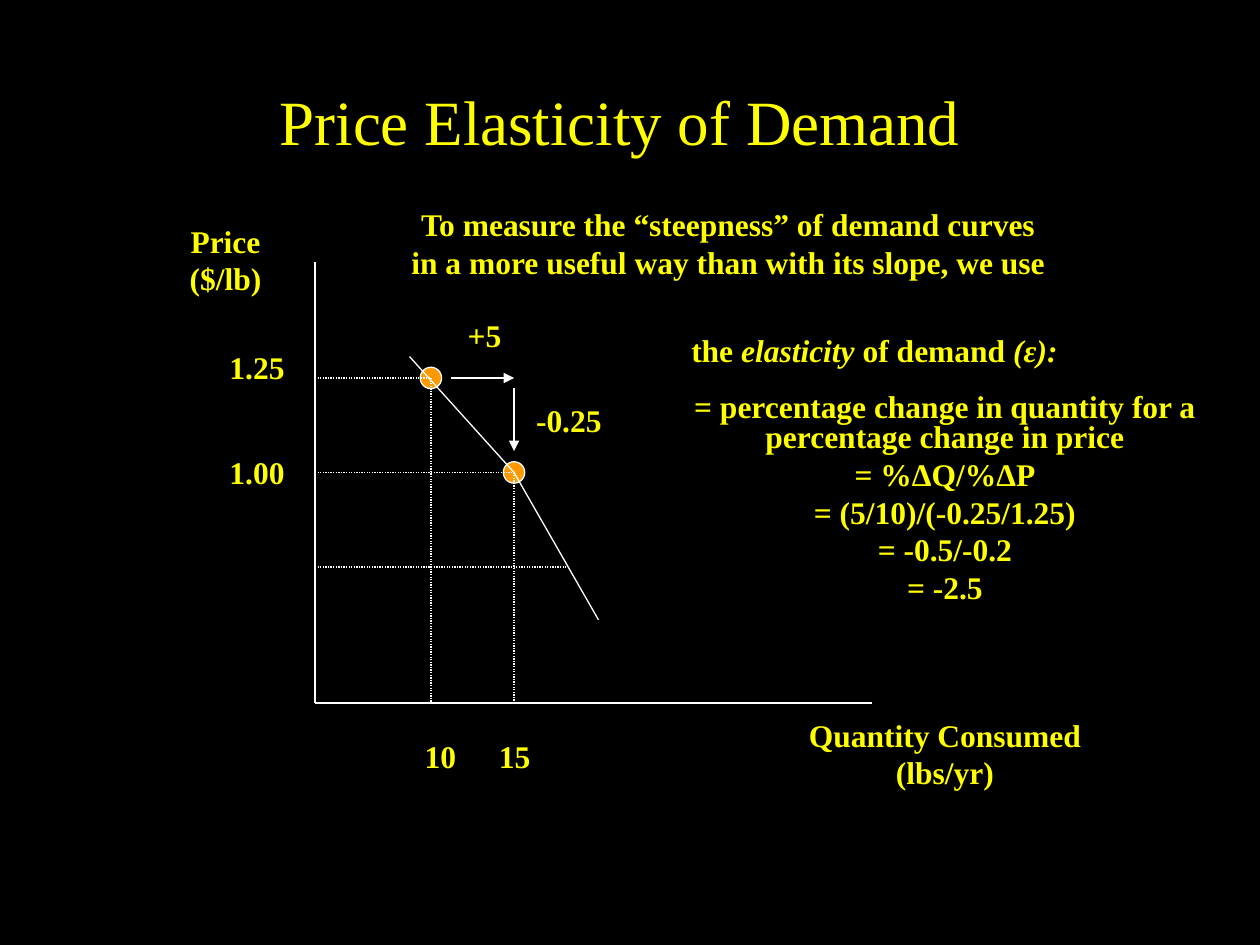
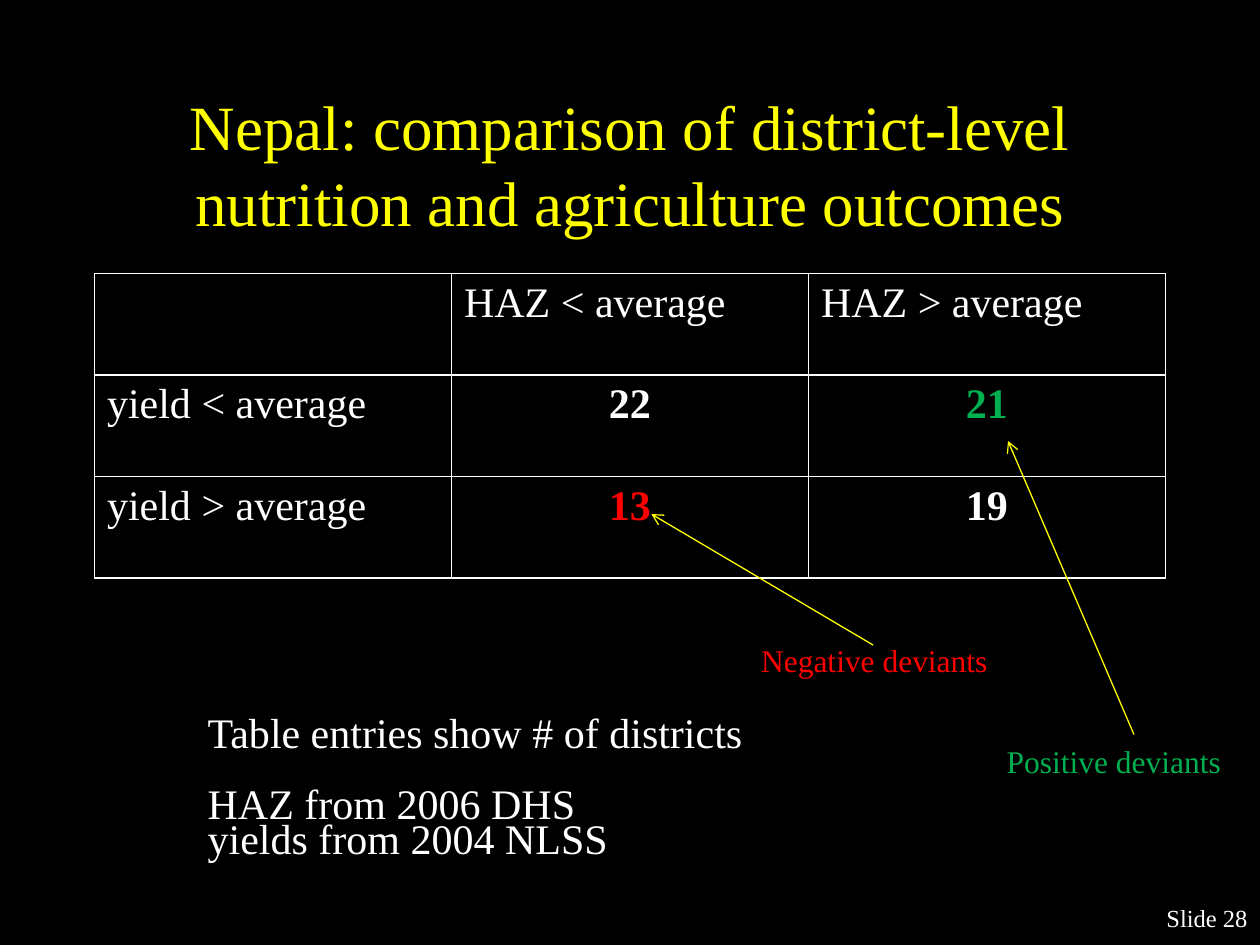
import dataclasses

import lxml.etree
import pptx
import pptx.dml.color
import pptx.enum.dml
import pptx.enum.shapes
import pptx.enum.text
import pptx.oxml.ns
import pptx.util

Inches = pptx.util.Inches
Align = pptx.enum.text.PP_ALIGN
qn = pptx.oxml.ns.qn

FONT = "Times New Roman"
BLACK, WHITE, YELLOW = "000000", "FFFFFF", "FFFF00"
ORANGE, RED, GREEN = "FF9900", "FF0000", "00B050"
DOTTED = pptx.enum.dml.MSO_LINE.ROUND_DOT


@dataclasses.dataclass
class Box:
    left: float
    top: float
    width: float
    height: float

    def inside(self, left, top, width, height):
        return Box(self.left + left, self.top + top, width, height)

    def point(self, x, y):
        return self.left + x, self.top + y

    def lengths(self):
        return [Inches(value) for value in (self.left, self.top, self.width, self.height)]


def color(hex_string):
    return pptx.dml.color.RGBColor.from_string(hex_string)


def write(frame, paragraphs, size=18, ink=YELLOW, bold=False, align=Align.CENTER, spacing=None):
    for index, content in enumerate(paragraphs):
        para = frame.add_paragraph() if index else frame.paragraphs[0]
        para.alignment = align
        if spacing:
            para.line_spacing = spacing
        pieces = [(content, False)] if isinstance(content, str) else content
        for text, italic in pieces:
            span = para.add_run()
            span.text = text
            span.font.name = FONT
            span.font.size = pptx.util.Pt(size)
            span.font.bold = bold
            span.font.italic = italic
            span.font.color.rgb = color(ink)


def add_text(page, box, paragraphs, wrap=False, **style):
    frame = page.shapes.add_textbox(*box.lengths()).text_frame
    frame.word_wrap = wrap
    write(frame, paragraphs, **style)
    return frame


def add_line(page, start, end, ink=WHITE, dash=None, arrow=None):
    ends = [Inches(value) for value in (*start, *end)]
    line = page.shapes.add_connector(pptx.enum.shapes.MSO_CONNECTOR.STRAIGHT, *ends)
    line.line.color.rgb = color(ink)
    line.line.width = pptx.util.Pt(0.75)
    if dash:
        line.line.dash_style = dash
    properties = line._element.spPr
    if arrow:
        outline = properties.find(qn("a:ln"))
        lxml.etree.SubElement(outline, qn("a:tailEnd"), type=arrow)
    lxml.etree.SubElement(properties, qn("a:effectLst"))


def add_page(deck, title, box):
    page = deck.slides.add_slide(deck.slide_layouts[5])
    holder = page.shapes.title
    holder.left, holder.top, holder.width, holder.height = box.lengths()
    holder.text_frame.vertical_anchor = pptx.enum.text.MSO_ANCHOR.MIDDLE
    write(holder.text_frame, [title], size=36)
    return page


def draw_marker(page, center):
    size = 0.17
    box = Box(center[0] - size / 2, center[1] - size / 2, size, size)
    marker = page.shapes.add_shape(pptx.enum.shapes.MSO_SHAPE.OVAL, *box.lengths())
    marker.shadow.inherit = False
    marker.fill.solid()
    marker.fill.fore_color.rgb = color(ORANGE)
    marker.line.color.rgb = color(WHITE)
    marker.line.width = pptx.util.Pt(0.75)


def draw_demand_graph(page, box):
    origin = box.point(0, box.height)
    add_line(page, origin, box.point(box.width, box.height))
    add_line(page, origin, box.point(0, 0))

    sales = [(0.92, 0.92), (1.58, 1.67)]
    for x, y in sales:
        draw_marker(page, box.point(x, y))
        add_line(page, box.point(x, y), box.point(x, box.height), dash=DOTTED)
    for x, y in sales + [(2, 2.42)]:
        add_line(page, box.point(0, y), box.point(x, y), dash=DOTTED)

    curve = [(0.75, 0.75), sales[1], (2.25, 2.84)]
    for start, end in zip(curve, curve[1:]):
        add_line(page, box.point(*start), box.point(*end))

    for start, end in [((1.08, 0.92), (1.58, 0.92)), ((1.58, 1), (1.58, 1.5))]:
        add_line(page, box.point(*start), box.point(*end), arrow="triangle")

    labels = [
        (["Price", "($/lb)"], -1.1, -0.37, 0.78, 0.71),
        (["Quantity Consumed", "(lbs/yr)"], 3.81, 3.55, 2.38, 0.71),
        (["1.25"], -0.78, 0.63, 0.64, 0.4),
        (["1.00"], -0.78, 1.47, 0.64, 0.4),
        (["10"], 0.77, 3.72, 0.45, 0.4),
        (["15"], 1.36, 3.72, 0.45, 0.4),
        (["+5"], 1.11, 0.38, 0.47, 0.4),
        (["-0.25"], 1.65, 1.05, 0.73, 0.4),
    ]
    for lines, *place in labels:
        add_text(page, box.inside(*place), lines, bold=True)


def draw_explanation(page, box):
    add_text(page, box.inside(0, 0, 5.34, 0.71), [
        "To measure the “steepness” of demand curves",
        "in a more useful way than with its slope, we use",
    ], bold=True)
    add_text(page, box.inside(2.26, 1, 3.14, 0.4), [
        [("the ", False), ("elasticity", True), (" of demand ", False), ("(ε):", True)],
    ], bold=True)
    formula = add_text(page, box.inside(1.89, 1.5, 5, 1.8), [
        "= percentage change in quantity for a percentage change in price",
        "= %ΔQ/%ΔP",
        "= (5/10)/(-0.25/1.25)",
        "= -0.5/-0.2",
        "= -2.5",
    ], wrap=True, bold=True)
    formula.paragraphs[0].line_spacing = 0.8


def add_borders(cell):
    properties = cell._tc.get_or_add_tcPr()
    for index, side in enumerate(("lnL", "lnR", "lnT", "lnB")):
        border = lxml.etree.Element(qn("a:" + side), w=str(pptx.util.Pt(1)))
        fill = lxml.etree.SubElement(border, qn("a:solidFill"))
        lxml.etree.SubElement(fill, qn("a:srgbClr"), val=WHITE)
        properties.insert(index, border)


def draw_district_table(page, box):
    rows = [
        ["", "HAZ < average", "HAZ > average"],
        ["yield < average", "22", "21"],
        ["yield > average", "13", "19"],
    ]
    inks = {"21": GREEN, "13": RED}
    table = page.shapes.add_table(len(rows), len(rows[0]), *box.lengths()).table
    table.first_row = table.horz_banding = False
    for row, texts in enumerate(rows):
        for column, text in enumerate(texts):
            cell = table.cell(row, column)
            cell.fill.solid()
            cell.fill.fore_color.rgb = color(BLACK)
            add_borders(cell)
            if text:
                is_count = text.isdigit()
                write(cell.text_frame, [text], size=24, ink=inks.get(text, WHITE),
                      bold=is_count, align=Align.CENTER if is_count else Align.LEFT)


def draw_deviants(page, box):
    callouts = [
        ("Negative deviants", RED, (0, 1.04, 2.02, 0.32), (1, 1.04), (-0.76, 0)),
        ("Positive deviants", GREEN, (1.95, 1.84, 1.92, 0.32), (3.07, 1.75), (2.07, -0.58)),
    ]
    for text, ink, place, start, end in callouts:
        add_line(page, box.point(*start), box.point(*end), ink=YELLOW, arrow="arrow")
        add_text(page, box.inside(*place), [text], ink=ink, spacing=0.7)


def draw_sources(page, box):
    frame = add_text(page, box, [
        "Table entries show # of districts",
        "HAZ from 2006 DHS",
        "yields from 2004 NLSS",
    ], wrap=True, size=24, ink=WHITE, align=Align.LEFT, spacing=0.7)
    frame.paragraphs[1].space_before = pptx.util.Pt(20)


def draw_footer(page, number):
    add_text(page, Box(8.88, 7.12, 1.12, 0.33), [f"Slide {number}"],
             wrap=True, size=14, ink=WHITE, align=Align.RIGHT)


def build_elasticity(deck):
    page = add_page(deck, "Price Elasticity of Demand", Box(0.67, 0.33, 8.5, 1.25))
    draw_demand_graph(page, Box(2.5, 2.08, 4.42, 3.5))
    draw_explanation(page, Box(3.11, 1.58, 6.89, 3.3))


def build_nepal(deck):
    title = "Nepal: comparison of district-level nutrition and agriculture outcomes"
    page = add_page(deck, title, Box(0.75, 0.67, 8.5, 1.25))
    draw_district_table(page, Box(0.75, 2.17, 8.5, 2.42))
    draw_footer(page, 28)
    draw_sources(page, Box(1.55, 5.67, 4.57, 1.23))
    draw_deviants(page, Box(5.93, 4.08, 3.87, 2.16))


def main():
    deck = pptx.Presentation()
    deck.slide_width, deck.slide_height = Inches(10), Inches(7.5)
    background = deck.slide_master.background.fill
    background.solid()
    background.fore_color.rgb = color(BLACK)
    build_elasticity(deck)
    build_nepal(deck)
    deck.save("out.pptx")


if __name__ == "__main__":
    main()
